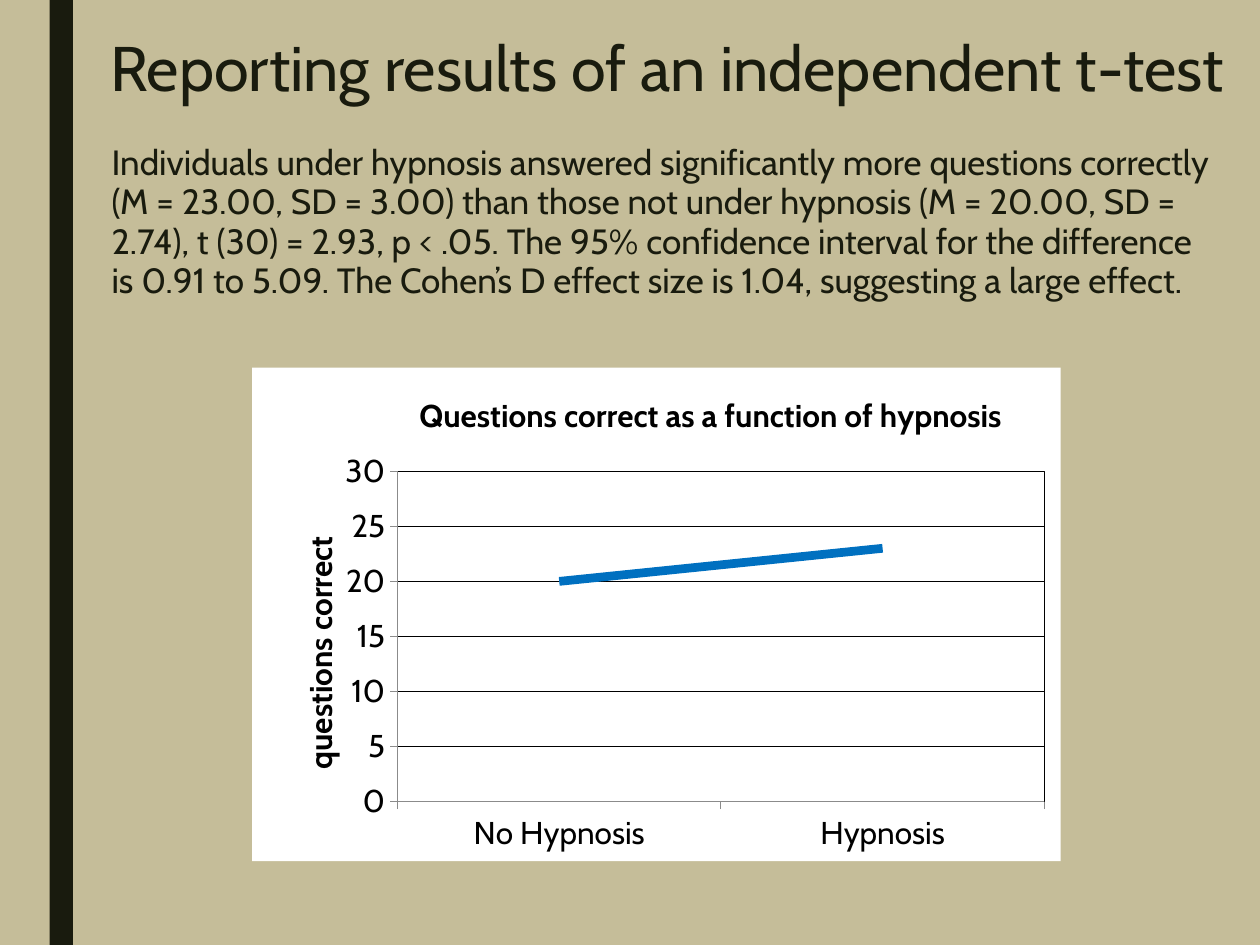
import pptx
import pptx.chart.data
import pptx.dml.color
import pptx.enum.chart
import pptx.enum.shapes
import pptx.enum.text
import pptx.oxml
import pptx.oxml.ns
import pptx.util
from pptx.util import Cm, Pt

FONT = "Cabin"
COLORS = {
    "background": "C5BD99",
    "dark": "191B0E",
    "black": "000000",
    "white": "FFFFFF",
    "line": "0070C0",
    "axis": "8B8B8B",
}


def rgb(name):
    return pptx.dml.color.RGBColor.from_string(COLORS[name])


def style_font(font, size, color, bold=False):
    font.name = FONT
    font.size = Pt(size)
    font.bold = bold
    font.color.rgb = rgb(color)


def style_line(line, color, width):
    line.color.rgb = rgb(color)
    line.width = Pt(width)


def add_side_bar(slide, left, top, width, height):
    bar = slide.shapes.add_shape(
        pptx.enum.shapes.MSO_SHAPE.RECTANGLE, left, top, width, height)
    bar.shadow.inherit = False
    bar.fill.solid()
    bar.fill.fore_color.rgb = rgb("dark")
    bar.line.fill.background()


def add_text(slide, left, top, width, height, text, size, line_spacing):
    """Add a wrapped text box and return its paragraph."""
    frame = slide.shapes.add_textbox(left, top, width, height).text_frame
    frame.word_wrap = True
    paragraph = frame.paragraphs[0]
    paragraph.text = text
    paragraph.line_spacing = line_spacing
    style_font(paragraph.font, size, "dark")
    return paragraph


def chart_xml(tag, content):
    namespaces = pptx.oxml.ns.nsdecls("c", "a")
    return pptx.oxml.parse_xml(f"<c:{tag} {namespaces}>{content}</c:{tag}>")


def place_manually(element, index, **fractions):
    """Fix the place of a chart part, in fractions of the chart box."""
    for layout in element.findall(pptx.oxml.ns.qn("c:layout")):
        element.remove(layout)
    target = '<c:layoutTarget val="inner"/>' if "w" in fractions else ""
    modes = '<c:xMode val="edge"/><c:yMode val="edge"/>'
    values = "".join(f'<c:{key} val="{value}"/>' for key, value in fractions.items())
    layout = chart_xml(
        "layout", f"<c:manualLayout>{target}{modes}{values}</c:manualLayout>")
    element.insert(index, layout)


def fill_properties(fill, outline):
    return chart_xml(
        "spPr",
        f'<a:solidFill><a:srgbClr val="{COLORS[fill]}"/></a:solidFill>{outline}')


def set_title(title, text, x, y):
    title.text_frame.text = text
    style_font(title.text_frame.paragraphs[0].font, 18, "black", bold=True)
    place_manually(title._element, 1, x=x, y=y)


def add_results_chart(slide, left, top, width, height):
    data = pptx.chart.data.CategoryChartData()
    data.categories = ["No Hypnosis", "Hypnosis"]
    data.add_series("Series 1", (20, 23))
    chart = slide.shapes.add_chart(
        pptx.enum.chart.XL_CHART_TYPE.LINE, left, top, width, height, data).chart
    chart.has_legend = False
    style_font(chart.font, 10, "black")

    chart.has_title = True
    set_title(chart.chart_title, "Questions correct as a function of hypnosis", 0.2, 0.04)
    chart.chart_title.include_in_layout = False

    values = chart.value_axis
    values.minimum_scale, values.maximum_scale, values.major_unit = 0, 30, 5
    values.has_major_gridlines = True
    style_line(values.major_gridlines.format.line, "black", 0.5)
    values.has_title = True
    set_title(values.axis_title, "questions correct", 0.05, 0.33)
    for axis in (values, chart.category_axis):
        axis.major_tick_mark = pptx.enum.chart.XL_TICK_MARK.OUTSIDE
        style_line(axis.format.line, "axis", 0.5)
        style_font(axis.tick_labels.font, 18, "black")

    plot = chart.plots[0]
    plot.vary_by_categories = False
    series = plot.series[0]
    series.smooth = False
    series.marker.style = pptx.enum.chart.XL_MARKER_STYLE.NONE
    style_line(series.format.line, "line", 5)

    chart_space = chart._chartSpace
    plot_area = chart_space.chart.plotArea
    place_manually(plot_area, 0, x=0.18, y=0.21, w=0.8, h=0.67)
    border = (f'<a:ln w="{Pt(0.5)}"><a:solidFill>'
              f'<a:srgbClr val="{COLORS["black"]}"/></a:solidFill></a:ln>')
    plot_area.append(fill_properties("white", border))
    text_properties = chart_space.find(pptx.oxml.ns.qn("c:txPr"))
    text_properties.addprevious(
        fill_properties("white", "<a:ln><a:noFill/></a:ln>"))


def build_results_slide(presentation):
    slide = presentation.slides.add_slide(presentation.slide_layouts[6])
    slide.background.fill.solid()
    slide.background.fill.fore_color.rgb = rgb("background")

    add_side_bar(slide, Cm(1), 0, Cm(0.47), presentation.slide_height)
    title = add_text(
        slide, Cm(1.7), Cm(0.64), Cm(23.5), Cm(4.1),
        "Reporting results of an independent t-test", 36, 0.89)
    title.alignment = pptx.enum.text.PP_ALIGN.CENTER
    body = add_text(
        slide, Cm(2), Cm(2.77), Cm(22.86), Cm(5.08),
        "Individuals under hypnosis answered significantly more questions "
        "correctly (M = 23.00, SD = 3.00) than those not under hypnosis "
        "(M = 20.00, SD = 2.74), t (30) = 2.93, p < .05. The 95% confidence "
        "interval for the difference is 0.91 to 5.09. The Cohen’s D effect "
        "size is 1.04, suggesting a large effect.", 20, 0.94)
    body.space_before, body.space_after = Pt(10), Pt(2)
    add_results_chart(slide, Cm(5.08), Cm(7.41), Cm(16.3), Cm(9.95))


def main():
    presentation = pptx.Presentation()
    presentation.slide_width, presentation.slide_height = Cm(25.4), Cm(19.05)
    build_results_slide(presentation)
    presentation.save("out.pptx")


if __name__ == "__main__":
    main()
